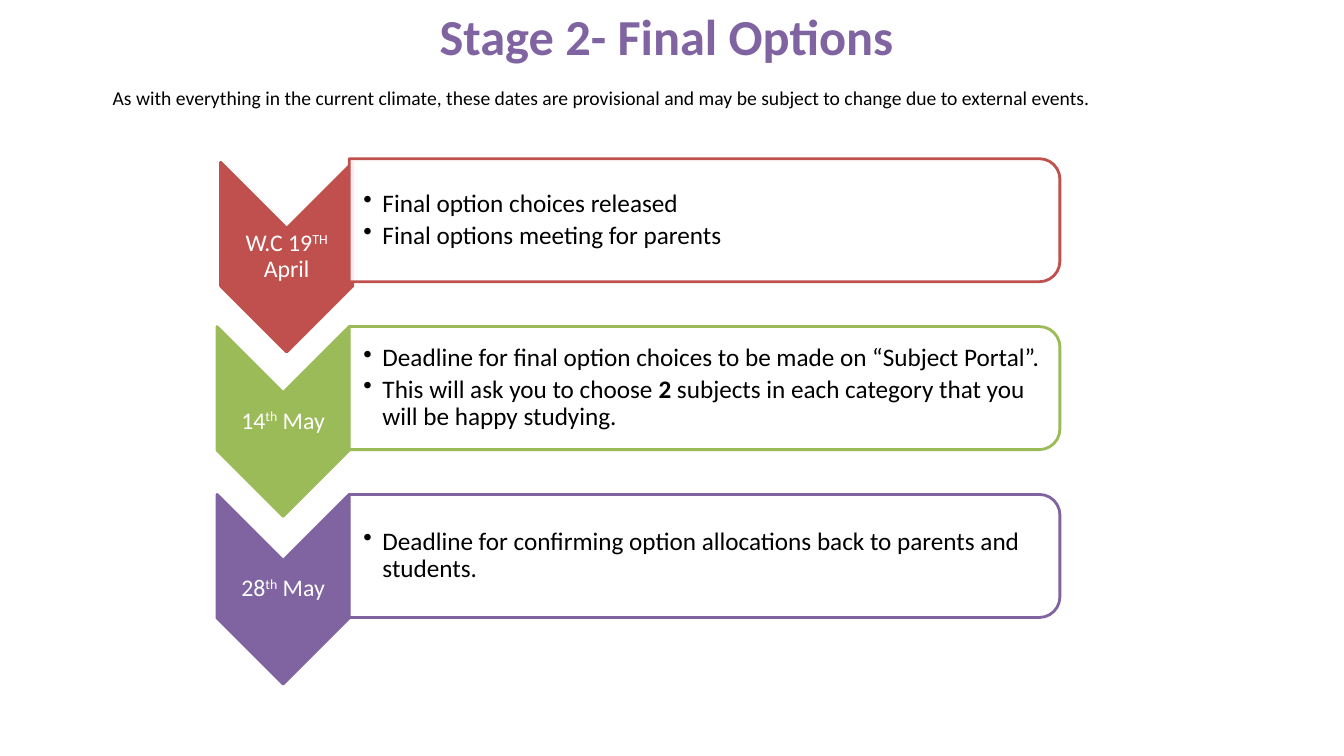
from dataclasses import dataclass

from lxml import etree
from pptx import Presentation
from pptx import util as u
from pptx.dml.color import RGBColor
from pptx.enum import shapes, text
from pptx.oxml.ns import qn


@dataclass(frozen=True)
class Theme:
    font: str = "Calibri"
    red: str = "C0504D"
    green: str = "9BBB59"
    purple: str = "8064A2"
    white: str = "FFFFFF"
    black: str = "000000"
    title: int = 36
    note: int = 14
    date: int = 17
    detail: int = 18
    outline: int = 2


THEME = Theme()

# Each stage: colour, date parts, detail paragraphs; a span is (wording, format)
RAISED = {"baseline": 30000}
STAGES = [
    (THEME.red, [("W.C 19", {}), ("TH", RAISED), (" April", {})],
     [[("Final option choices released", {})],
      [("Final options meeting for parents", {})]]),
    (THEME.green, [("14", {}), ("th", RAISED), (" May", {})],
     [[("Deadline for final option choices to be made on “Subject Portal”.", {})],
      [("This will ask you to choose ", {}), ("2", {"bold": True}),
       (" subjects in each category that you will be happy studying.", {})]]),
    (THEME.purple, [("28", {}), ("th", RAISED), (" May", {})],
     [[("Deadline for confirming option allocations back to parents and students.", {})]]),
]


def add_bullet(para, indent):
    props = para._p.get_or_add_pPr()
    props.set("marL", str(indent))
    props.set("indent", str(-indent))
    etree.SubElement(props, qn("a:buChar")).set("char", "•")


def add_text(page, box, paragraphs, size, colour, frame_format=None,
             para_format=None, bold=False, bullet=None):
    """Place a text box whose paragraphs are lists of spans."""
    frame = page.shapes.add_textbox(*map(u.Cm, box)).text_frame
    for name, value in {"word_wrap": True, **(frame_format or {})}.items():
        setattr(frame, name, value)
    for index, spans in enumerate(paragraphs):
        para = frame.add_paragraph() if index else frame.paragraphs[0]
        if bullet:
            add_bullet(para, bullet)
        for name, value in (para_format or {}).items():
            setattr(para, name, value)
        for wording, extra in spans:
            span = para.add_run()
            span.text = wording
            span.font.color.rgb = RGBColor.from_string(colour)
            styles = {"name": THEME.font, "size": u.Pt(size), "bold": bold, **extra}
            baseline = styles.pop("baseline", None)
            for name, value in styles.items():
                setattr(span.font, name, value)
            if baseline:
                span.font._element.set("baseline", str(baseline))


def add_turned_shape(page, kind, box, fill, line, opacity=None):
    """Draw a preset turned a quarter clockwise so that it fills the box."""
    left, top, width, height = box
    shift = (width - height) / 2
    shape = page.shapes.add_shape(
        kind, *map(u.Cm, (left + shift, top - shift, height, width)))
    shape.rotation = 90
    shape.shadow.inherit = False
    shape.fill.solid()
    shape.fill.fore_color.rgb = RGBColor.from_string(fill)
    shape.line.color.rgb = RGBColor.from_string(line)
    shape.line.width = u.Pt(THEME.outline)
    if opacity:
        colour = shape._element.spPr.find(qn("a:solidFill")).find(qn("a:srgbClr"))
        etree.SubElement(colour, qn("a:alpha")).set("val", str(opacity * 1000))


def add_heading(page, box):
    left, top, width, height = box
    add_text(page, (left, top, width, 1.8), [[("Stage 2- Final Options", {})]],
             THEME.title, THEME.purple, {"word_wrap": False},
             {"alignment": text.PP_ALIGN.CENTER}, bold=True)
    note = ("As with everything in the current climate, these dates are provisional "
            "and may be subject to change due to external events.")
    add_text(page, (left + 2.59, top + 2.03, 27.03, height - 2.03),
             [[(note, {})]], THEME.note, THEME.black)


def add_stage(page, box, nudge, colour, date, details):
    left, top, width, height = box
    arrow_width, arrow_height = 3.33, 4.78
    arrow_left, arrow_top = left + nudge, top + nudge
    tight = u.Cm(0.03)
    frame_format = {"vertical_anchor": text.MSO_ANCHOR.MIDDLE, "margin_left": tight,
                    "margin_top": tight, "margin_right": tight, "margin_bottom": tight}

    # Date arrow
    add_turned_shape(page, shapes.MSO_SHAPE.CHEVRON,
                     (arrow_left, arrow_top, arrow_width, arrow_height), colour, colour)
    add_text(page, (arrow_left, arrow_top + 1.68, arrow_width, 1.42), [date],
             THEME.date, THEME.white, frame_format,
             {"alignment": text.PP_ALIGN.CENTER, "line_spacing": 0.9,
              "space_after": u.Pt(6)})

    # Detail panel
    panel_left, panel_width = left + arrow_width, width - arrow_width
    add_turned_shape(page, shapes.MSO_SHAPE.ROUND_2_SAME_RECTANGLE,
                     (panel_left, top, panel_width, height), THEME.white, colour, 90)
    add_text(page, (panel_left, top + 0.15, panel_width - 0.15, height - 0.3), details,
             THEME.detail, THEME.black, {**frame_format, "margin_left": u.Cm(0.36)},
             {"line_spacing": 0.9, "space_after": u.Pt(3)}, bullet=u.Cm(0.48))


def main():
    deck = Presentation()
    deck.slide_width, deck.slide_height = u.Cm(33.87), u.Cm(19.05)
    page = deck.slides.add_slide(deck.slide_layouts[6])

    # Timeline, with the first arrow set slightly off the column
    first_top, pitch = 4, 4.23
    for index, stage in enumerate(STAGES):
        nudge = 0 if index else 0.09
        add_stage(page, (5.47, first_top + index * pitch, 21.24, 3.1), nudge, *stage)

    # Title and note
    add_heading(page, (0, 0, 33.6, 2.9))
    deck.save("out.pptx")


if __name__ == "__main__":
    main()
